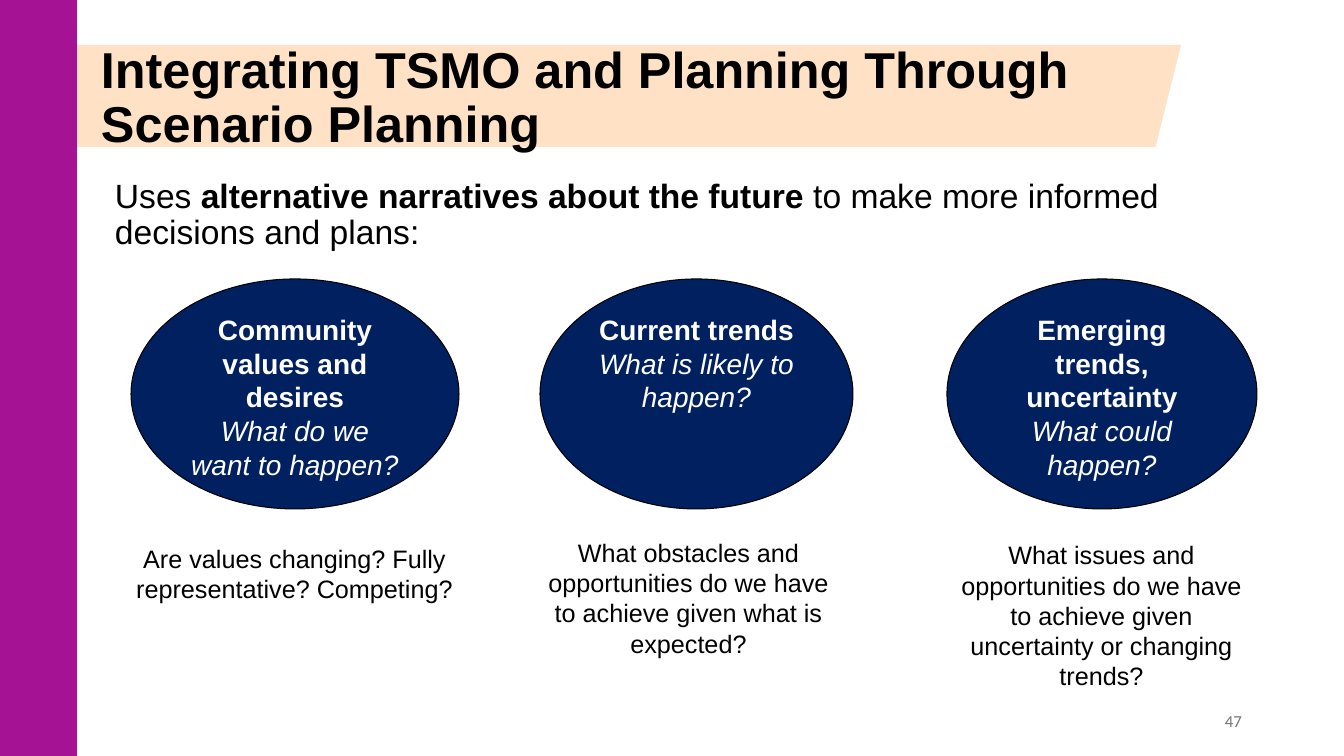
from pptx import Presentation
from pptx.dml.color import RGBColor
from pptx.enum.shapes import MSO_SHAPE
from pptx.enum.text import MSO_ANCHOR, PP_ALIGN
from pptx.util import Pt

PX = 914400 / 100.8
TITLE = "Integrating TSMO and Planning Through Scenario Planning"
LEAD = [("Uses ", {}),
        ("alternative narratives about the future", {"bold": True}),
        (" to make more informed decisions and plans:", {})]
OVAL_TOP, OVAL_HEIGHT = 279, 230
SCENARIOS = [
    {"heading": "Community values and desires", "ask": "What do we want to happen?",
     "detail": "Are values changing? Fully representative? Competing?",
     "oval": (131, 328), "detail_box": (47, 509, 495, 200)},
    {"heading": "Current trends", "ask": "What is likely to happen?",
     "detail": "What obstacles and opportunities do we have to achieve "
               "given what is expected?",
     "oval": (540, 313), "detail_box": (465, 503, 447, 199)},
    {"heading": "Emerging trends, uncertainty", "ask": "What could happen?",
     "detail": "What issues and opportunities do we have to achieve "
               "given uncertainty or changing trends?",
     "oval": (947, 310), "detail_box": (888, 505, 427, 203)},
]


def color(value):
    """Turn a hex string into a colour."""
    return RGBColor.from_string(value)


def emu(box):
    """Turn px lengths into EMU."""
    return [round(v * PX) for v in box]


def write(shape, paragraphs, size, ink="000000", font="Arial", align=PP_ALIGN.LEFT,
          anchor=MSO_ANCHOR.TOP, spacing=None, insets=(10, 5, 10, 5)):
    """Fill a shape with paragraphs made of (text, format) runs."""
    tf = shape.text_frame
    sides = ("margin_left", "margin_top", "margin_right", "margin_bottom")
    frame = dict(zip(sides, emu(insets)), word_wrap=True, vertical_anchor=anchor)
    for name, value in frame.items():
        setattr(tf, name, value)
    for i, runs in enumerate(paragraphs):
        p = tf.add_paragraph() if i else tf.paragraphs[0]
        p.alignment = align
        if spacing:
            p.line_spacing = spacing
        for text, style in runs:
            r = p.add_run()
            r.text = text
            base = {"name": font, "size": Pt(size), "bold": False, "italic": False}
            for name, value in {**base, **style}.items():
                setattr(r.font, name, value)
            r.font.color.rgb = color(ink)


def add_shape(s, kind, box, fill=None, line=None):
    """Add a flat preset shape."""
    sp = s.shapes.add_shape(kind, *emu(box))
    sp.shadow.inherit = False
    if fill:
        sp.fill.solid()
        sp.fill.fore_color.rgb = color(fill)
    else:
        sp.fill.background()
    if line:
        sp.line.color.rgb = color(line)
        sp.line.width = Pt(0.75)
    else:
        sp.line.fill.background()
    return sp


def main():
    """Build the slide and save it."""
    prs = Presentation()
    prs.slide_width, prs.slide_height = emu((1344, 756))
    s = prs.slides.add_slide(prs.slide_layouts[5])

    add_shape(s, MSO_SHAPE.PARALLELOGRAM, (24, 45, 1157, 102), "FFE2C5")
    add_shape(s, MSO_SHAPE.RECTANGLE, (0, 0, 77, 756), "A51394")

    title = s.shapes.title
    title.element.getparent().append(title.element)
    title.left, title.top, title.width, title.height = emu((91, 40, 1055, 102))
    write(title, [[(TITLE, {"bold": True})]], 36, spacing=0.9)

    lead = s.shapes.add_textbox(*emu((105, 174, 1212, 92)))
    write(lead, [LEAD], 24, spacing=0.9)

    for scenario in SCENARIOS:
        left, width = scenario["oval"]
        oval = add_shape(s, MSO_SHAPE.OVAL, (left, OVAL_TOP, width, OVAL_HEIGHT),
                         "002060", "000000")
        write(oval, [[(scenario["heading"], {"bold": True})],
                     [(scenario["ask"], {"italic": True})]],
              20, "FFFFFF", align=PP_ALIGN.CENTER, insets=(10, 0, 10, 0))
        detail = add_shape(s, MSO_SHAPE.OVAL, scenario["detail_box"])
        write(detail, [[(scenario["detail"], {})]], 18, align=PP_ALIGN.CENTER)

    number = s.shapes.add_textbox(*emu((950, 701, 302, 40)))
    write(number, [[("47", {})]], 12, "757575", "Calibri", PP_ALIGN.RIGHT,
          MSO_ANCHOR.MIDDLE)

    prs.save("out.pptx")


if __name__ == "__main__":
    main()
